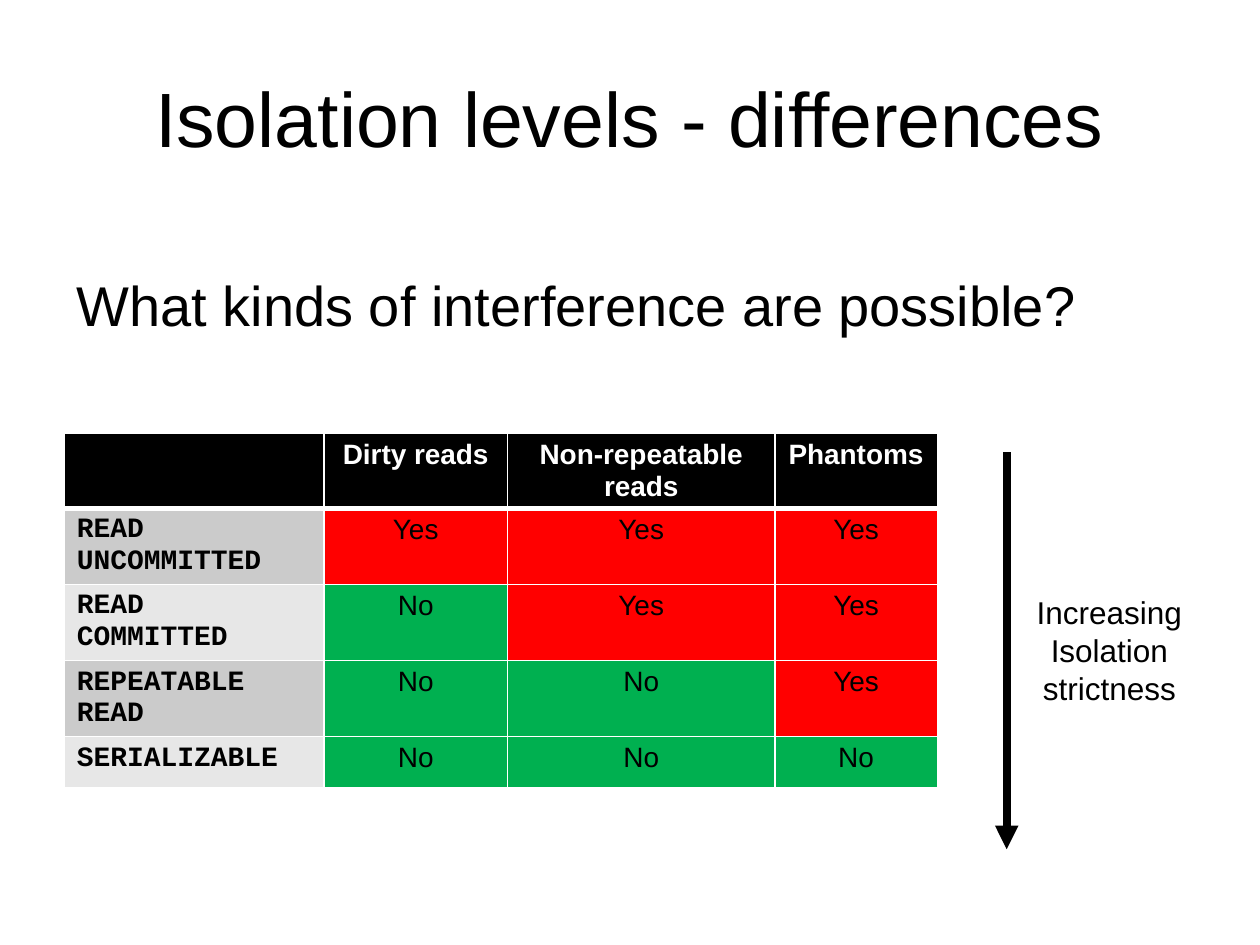
"""Build the slide that compares isolation levels by possible interference."""
from dataclasses import dataclass

from lxml import etree
from pptx import Presentation
from pptx import util as u
from pptx.dml.color import RGBColor
from pptx.enum import shapes, text
from pptx.oxml.ns import qn

BLACK = RGBColor(0x00, 0x00, 0x00)
WHITE = RGBColor(0xFF, 0xFF, 0xFF)
RED = RGBColor(0xFF, 0x00, 0x00)
GREEN = RGBColor(0x00, 0xB0, 0x50)
BANDS = (RGBColor(0xCB, 0xCB, 0xCB), RGBColor(0xE7, 0xE7, 0xE7))

WIDTH, HEIGHT = 10, 7.5
MARGIN = 0.51
ROW_HEIGHT = 0.41
COLUMNS = (2.06, 1.46, 2.12, 1.29)
ANOMALIES = ("", "Dirty reads", "Non-repeatable reads", "Phantoms")
CENTER = text.PP_ALIGN.CENTER
LEFT = text.PP_ALIGN.LEFT


@dataclass(frozen=True)
class IsolationLevel:
    """An isolation level and the number of anomalies it prevents."""

    name: str
    prevented: int


@dataclass(frozen=True)
class Lettering:
    """Font and alignment of one kind of text."""

    size: int
    color: RGBColor = BLACK
    bold: bool = False
    name: str = "Arial"
    align: text.PP_ALIGN = CENTER


LEVELS = tuple(
    IsolationLevel(name, prevented)
    for prevented, name in enumerate(
        ("READ UNCOMMITTED", "READ COMMITTED", "REPEATABLE READ", "SERIALIZABLE")
    )
)
TITLE = Lettering(44)
QUESTION = Lettering(32, align=LEFT)
CAPTION = Lettering(18)
HEADING = Lettering(16, WHITE, bold=True)
LEVEL_NAME = Lettering(16, bold=True, name="Courier New", align=LEFT)
ANSWER = Lettering(16)


def write(frame, lines: tuple[str, ...], style: Lettering) -> None:
    """Fill a text frame with one paragraph per line."""
    font_values = {"size": u.Pt(style.size), "bold": style.bold, "name": style.name}
    frame.text = "\n".join(lines)
    for paragraph in frame.paragraphs:
        paragraph.alignment = style.align
        for run in paragraph.runs:
            for attribute, value in font_values.items():
                setattr(run.font, attribute, value)
            run.font.color.rgb = style.color


def place(shape, left: float, top: float, width: float, height: float) -> None:
    """Move and size a shape, in inches."""
    values = {"left": left, "top": top, "width": width, "height": height}
    for attribute, value in values.items():
        setattr(shape, attribute, u.Inches(value))


def add_label(slide, box: tuple, lines: tuple[str, ...], style: Lettering, wrap: bool) -> None:
    """Add a text box."""
    label = slide.shapes.add_textbox(*map(u.Inches, box))
    write(label.text_frame, lines, style)
    label.text_frame.word_wrap = wrap


def add_borders(cell, top: float, bottom: float) -> None:
    """Give a cell white borders of the given top and bottom widths."""
    properties = cell._tc.get_or_add_tcPr()
    for index, (side, points) in enumerate({"L": 1, "R": 1, "T": top, "B": bottom}.items()):
        border = etree.Element(qn(f"a:ln{side}"), w=str(u.Pt(points)))
        fill = etree.SubElement(border, qn("a:solidFill"))
        etree.SubElement(fill, qn("a:srgbClr"), val=str(WHITE))
        properties.insert(index, border)


def fill_cell(cell, words: str, style: Lettering, color: RGBColor, top: float = 1, bottom: float = 1) -> None:
    """Write, colour and border one table cell."""
    write(cell.text_frame, (words,), style)
    cell.fill.solid()
    cell.fill.fore_color.rgb = color
    add_borders(cell, top, bottom)


def add_comparison(slide) -> None:
    """Add the table of levels against anomalies."""
    count = len(LEVELS) + 1
    box = (MARGIN, 3.44, sum(COLUMNS), count * ROW_HEIGHT)
    table = slide.shapes.add_table(count, len(COLUMNS), *map(u.Inches, box)).table
    for column, width in zip(table.columns, COLUMNS):
        column.width = u.Inches(width)
    for index, anomaly in enumerate(ANOMALIES):
        fill_cell(table.cell(0, index), anomaly, HEADING, BLACK, bottom=3)
    for row, level in enumerate(LEVELS, start=1):
        top = 3 if row == 1 else 1
        fill_cell(table.cell(row, 0), level.name, LEVEL_NAME, BANDS[(row - 1) % 2], top)
        for column in range(1, len(COLUMNS)):
            answer, color = ("No", GREEN) if column <= level.prevented else ("Yes", RED)
            fill_cell(table.cell(row, column), answer, ANSWER, color, top)


def add_arrow(slide, x: float, start: float, end: float) -> None:
    """Add a thick downward arrow."""
    arrow = slide.shapes.add_connector(
        shapes.MSO_CONNECTOR.STRAIGHT, *map(u.Inches, (x, start, x, end))
    )
    arrow.line.color.rgb = BLACK
    arrow.line.width = u.Pt(4.5)
    etree.SubElement(arrow.line._get_or_add_ln(), qn("a:tailEnd"), type="triangle")
    etree.SubElement(arrow._element.spPr, qn("a:effectLst"))


def main() -> None:
    """Build and save the presentation."""
    deck = Presentation()
    deck.slide_width, deck.slide_height = u.Inches(WIDTH), u.Inches(HEIGHT)
    slide = deck.slides.add_slide(deck.slide_layouts.get_by_name("Title Only"))
    title = slide.shapes.title
    place(title, WIDTH * 0.05, HEIGHT * 0.04, WIDTH * 0.9, 1.25)
    write(title.text_frame, ("Isolation levels - differences",), TITLE)
    title.text_frame.vertical_anchor = text.MSO_ANCHOR.MIDDLE
    add_comparison(slide)
    question = ("What kinds of interference are possible?",)
    add_label(slide, (MARGIN, 2.1, WIDTH - 2 * MARGIN, 0.64), question, QUESTION, True)
    add_arrow(slide, 7.99, 3.59, 6.74)
    strictness = ("Increasing", "Isolation", "strictness")
    add_label(slide, (8.12, 4.66, 1.37, 1.01), strictness, CAPTION, False)
    deck.save("out.pptx")


if __name__ == "__main__":
    main()
